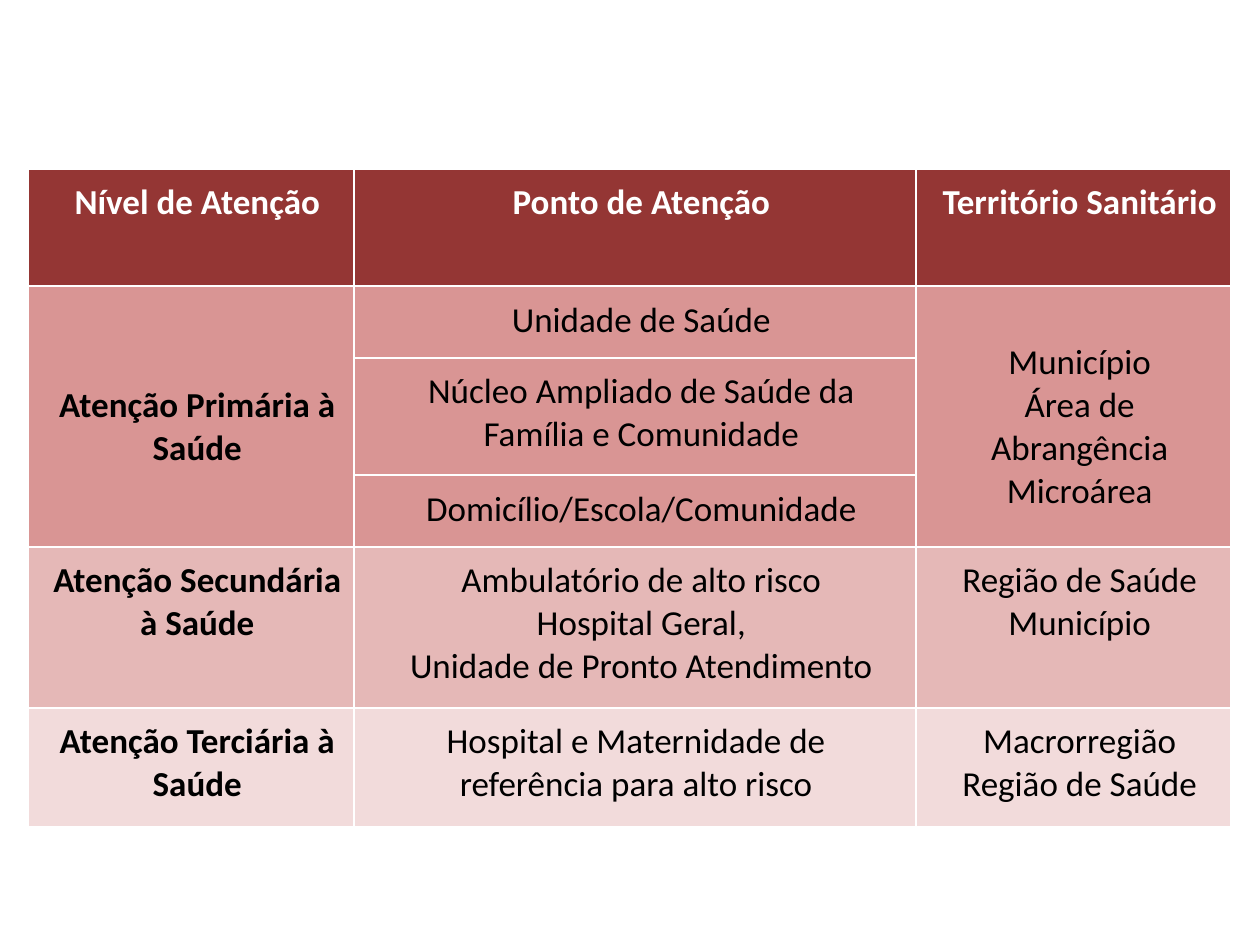
from lxml import etree
from pptx import Presentation
from pptx.dml.color import RGBColor
from pptx.enum.text import PP_ALIGN
from pptx.oxml.ns import qn
from pptx.util import Pt

CENTER = PP_ALIGN.CENTER
BLANK_LAYOUT = 6
BLACK, WHITE = "000000", "FFFFFF"
HEADER, PRIMARY, SECONDARY, TERTIARY = "943634", "D99594", "E5B8B7", "F2DBDB"
INDENT = 6
TOP_MARGIN = 7.2
LINE_HEIGHT = 24.4

COLUMN_WIDTHS = [186.5, 321, 180]
ROW_HEIGHTS = [67, 41, 67, 41, 92, 68.5]
ROW_FILLS = [HEADER, PRIMARY, PRIMARY, PRIMARY, SECONDARY, TERTIARY]
ROWS = [
    [["Nível de Atenção"], ["Ponto de Atenção"], ["Território Sanitário"]],
    [["Atenção Primária à Saúde"], ["Unidade de Saúde"],
     ["Município", "Área de Abrangência", "Microárea"]],
    [[], ["Núcleo Ampliado de Saúde da Família e Comunidade"], []],
    [[], ["Domicílio/Escola/Comunidade"], []],
    [["Atenção Secundária à Saúde"],
     ["Ambulatório de alto risco", "Hospital Geral,", "Unidade de Pronto Atendimento"],
     ["Região de Saúde", "Município"]],
    [["Atenção Terciária à Saúde"],
     ["Hospital e Maternidade de", "referência para alto risco"],
     ["Macrorregião", "Região de Saúde"]],
]
MERGED_ROWS = (1, 3)
LINES_ABOVE = {(1, 0): 2, (1, 2): 1}
UNINDENTED = (5, 1)


def color(value):
    return RGBColor.from_string(value)


class SlideBuilder:
    font_name = "Calibri"
    font_size = 20
    border_color = WHITE
    border_width = 1.5

    def __init__(self, slide):
        self.slide = slide

    def table(self, left, top, widths, heights):
        frame = self.slide.shapes.add_table(
            len(heights), len(widths), Pt(left), Pt(top), Pt(sum(widths)), Pt(sum(heights)))
        table = frame.table
        table.first_row = False
        table.horz_banding = False
        for column, width in zip(table.columns, widths):
            column.width = Pt(width)
        for row, height in zip(table.rows, heights):
            row.height = Pt(height)
        return table

    def borders(self, cell):
        properties = cell._tc.get_or_add_tcPr()
        for side in ("a:lnL", "a:lnR", "a:lnT", "a:lnB"):
            line = etree.SubElement(properties, qn(side), w=str(Pt(self.border_width)))
            fill = etree.SubElement(line, qn("a:solidFill"))
            etree.SubElement(fill, qn("a:srgbClr"), val=self.border_color)

    def cell(self, cell, lines, fill, text_color, bold, lines_above, indent):
        self.borders(cell)
        cell.fill.solid()
        cell.fill.fore_color.rgb = color(fill)
        cell.margin_left = Pt(6)
        cell.margin_right = Pt(5)
        cell.margin_top = Pt(TOP_MARGIN + lines_above * LINE_HEIGHT)
        cell.margin_bottom = Pt(TOP_MARGIN)
        for index, text in enumerate(lines):
            frame = cell.text_frame
            paragraph = frame.add_paragraph() if index else frame.paragraphs[0]
            self.paragraph(paragraph, text, text_color, bold, indent)

    def paragraph(self, paragraph, text, text_color, bold, indent):
        paragraph.alignment = CENTER
        properties = paragraph._p.get_or_add_pPr()
        properties.set("marL", str(Pt(indent)))
        properties.set("indent", "0")
        run = paragraph.add_run()
        run.text = text
        run.font.name = self.font_name
        run.font.size = Pt(self.font_size)
        run.font.bold = bold
        run.font.color.rgb = color(text_color)


def main():
    presentation = Presentation()
    presentation.slide_width = Pt(720)
    presentation.slide_height = Pt(540)
    slide = presentation.slides.add_slide(presentation.slide_layouts[BLANK_LAYOUT])
    builder = SlideBuilder(slide)
    table = builder.table(16, 96.5, COLUMN_WIDTHS, ROW_HEIGHTS)

    first, last = MERGED_ROWS
    for column in (0, 2):
        table.cell(first, column).merge(table.cell(last, column))

    for row, (cells, fill) in enumerate(zip(ROWS, ROW_FILLS)):
        for column, lines in enumerate(cells):
            position = (row, column)
            builder.cell(
                table.cell(row, column), lines, fill,
                text_color=BLACK if row else WHITE,
                bold=row == 0 or column == 0,
                lines_above=LINES_ABOVE.get(position, 0),
                indent=0 if position == UNINDENTED else INDENT)

    presentation.save("out.pptx")


if __name__ == "__main__":
    main()
